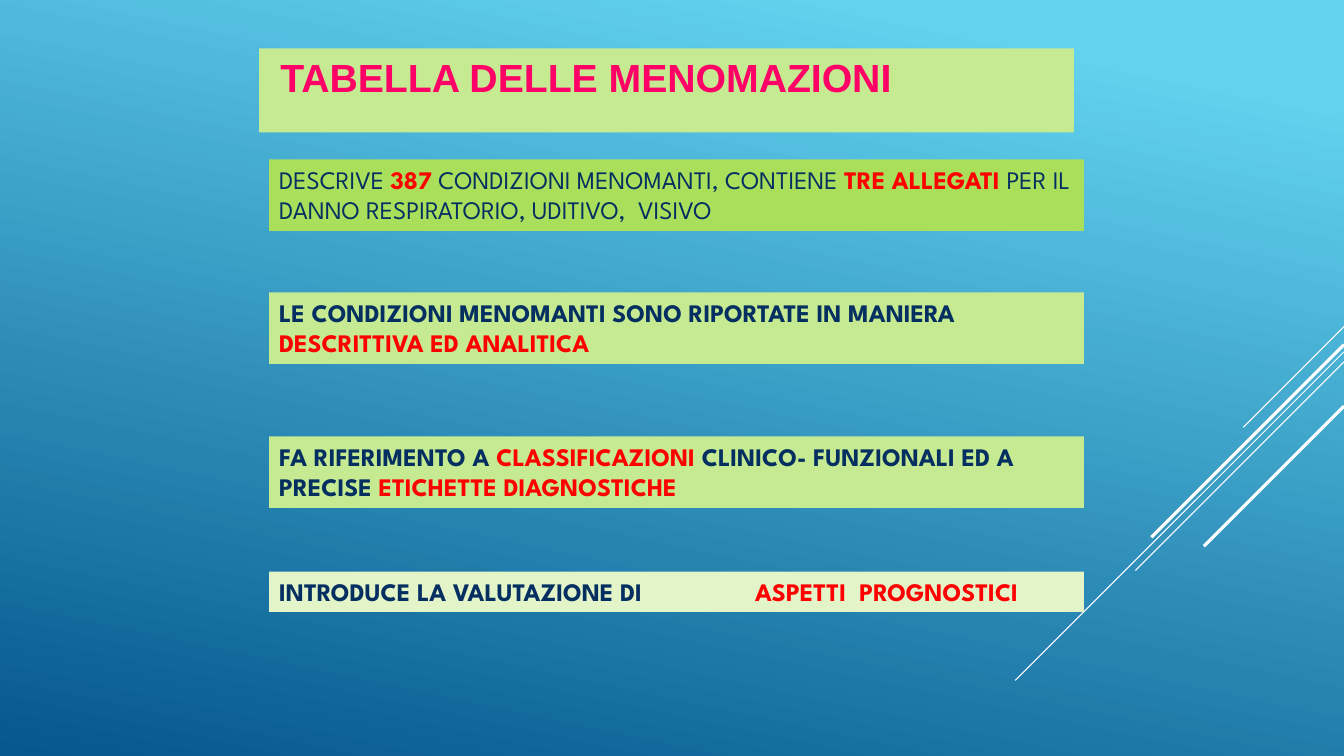
from lxml import etree
from pptx import Presentation
from pptx.dml.color import RGBColor
from pptx.enum.shapes import MSO_CONNECTOR
from pptx.enum.text import MSO_ANCHOR, MSO_AUTO_SIZE, PP_ALIGN
from pptx.oxml.ns import qn
from pptx.util import Inches, Pt

STRAIGHT = MSO_CONNECTOR.STRAIGHT
TOP = MSO_ANCHOR.TOP
GROW = MSO_AUTO_SIZE.SHAPE_TO_FIT_TEXT
LEFT = PP_ALIGN.LEFT

WIDE, HIGH = 13.33, 7.5
BOX_LEFT, BOX_WIDE = 2.67, 8.08
FONT = "League Spartan"
NAVY, RED, PINK, WHITE = "052F61", "FF0000", "FF0066", "FFFFFF"
GREEN, LIME, PALE = "C6EA92", "AADF5C", "E2F4C8"

# Start height on the right edge, run to the lower left, width in points
RAYS = [
    (3.24, 1, 0.75),
    (3.49, 3.26, 0.75),
    (3.59, 2.07, 0.75),
    (3.42, 1.91, 2.25),
    (4.03, 1.39, 2.25),
]

# Top, height, fill, runs of (text, colour, bold)
BOXES = [
    (1.58, 0.71, LIME, [
        ("DESCRIVE ", NAVY, False),
        ("387 ", RED, True),
        ("CONDIZIONI MENOMANTI, CONTIENE ", NAVY, False),
        ("TRE ALLEGATI ", RED, True),
        ("PER IL DANNO RESPIRATORIO, UDITIVO,  VISIVO", NAVY, False),
    ]),
    (2.9, 0.71, GREEN, [
        ("LE CONDIZIONI MENOMANTI SONO RIPORTATE IN MANIERA ", NAVY, True),
        ("DESCRITTIVA ED ANALITICA", RED, True),
    ]),
    (4.33, 0.71, GREEN, [
        ("FA RIFERIMENTO A ", NAVY, True),
        ("CLASSIFICAZIONI ", RED, True),
        ("CLINICO- FUNZIONALI ED A PRECISE ", NAVY, True),
        ("ETICHETTE DIAGNOSTICHE", RED, True),
    ]),
    (5.67, 0.4, PALE, [
        ("INTRODUCE LA VALUTAZIONE DI\t", NAVY, True),
        ("ASPETTI  PROGNOSTICI", RED, True),
    ]),
]


def rgb(code):
    return RGBColor.from_string(code)


def paint(slide):
    """Fill the background with the blue gradient."""
    fill = slide.background.fill
    fill.gradient()
    fill.gradient_angle = 258
    for stop, place, code in zip(fill.gradient_stops, (0.1, 1), ("62D2EF", "05578D")):
        stop.position = place
        stop.color.rgb = rgb(code)


def add_ray(slide, top, run, width):
    ray = slide.shapes.add_connector(
        STRAIGHT, Inches(WIDE), Inches(top), Inches(WIDE - run), Inches(top + run))
    ray.line.color.rgb = rgb(WHITE)
    ray.line.width = Pt(width)
    etree.SubElement(ray._element.spPr, qn("a:effectLst"))


def add_tab(para, place):
    tabs = etree.SubElement(para._p.get_or_add_pPr(), qn("a:tabLst"))
    etree.SubElement(tabs, qn("a:tab"), pos=str(Inches(place)), algn="l")


def write(shape, fill, runs, font, size, inset=0.1, tab=None):
    shape.fill.solid()
    shape.fill.fore_color.rgb = rgb(fill)
    frame = shape.text_frame
    frame.word_wrap = True
    frame.auto_size = GROW
    frame.vertical_anchor = TOP
    frame.margin_left, frame.margin_right = Inches(inset), Inches(0.1)
    frame.margin_top = frame.margin_bottom = Inches(0.05)
    para = frame.paragraphs[0]
    para.alignment = LEFT
    if tab:
        add_tab(para, tab)
    for text, code, bold in runs:
        run = para.add_run()
        run.text = text
        run.font.name = font
        run.font.size = Pt(size)
        run.font.bold = bold
        run.font.color.rgb = rgb(code)


def set_title(slide):
    title = slide.shapes.title
    title.left, title.top = Inches(2.57), Inches(0.48)
    title.width, title.height = Inches(BOX_WIDE), Inches(0.57)
    write(title, GREEN, [("TABELLA DELLE MENOMAZIONI", PINK, True)], "Arial", 28, inset=0.21)


def add_box(slide, top, height, fill, runs):
    box = slide.shapes.add_textbox(
        Inches(BOX_LEFT), Inches(top), Inches(BOX_WIDE), Inches(height))
    write(box, fill, runs, FONT, 18, tab=4.72)


def main():
    deck = Presentation()
    deck.slide_width, deck.slide_height = Inches(WIDE), Inches(HIGH)
    slide = deck.slides.add_slide(deck.slide_layouts[5])
    paint(slide)
    for ray in RAYS:
        add_ray(slide, *ray)
    set_title(slide)
    for box in BOXES:
        add_box(slide, *box)
    deck.save("out.pptx")


if __name__ == "__main__":
    main()
